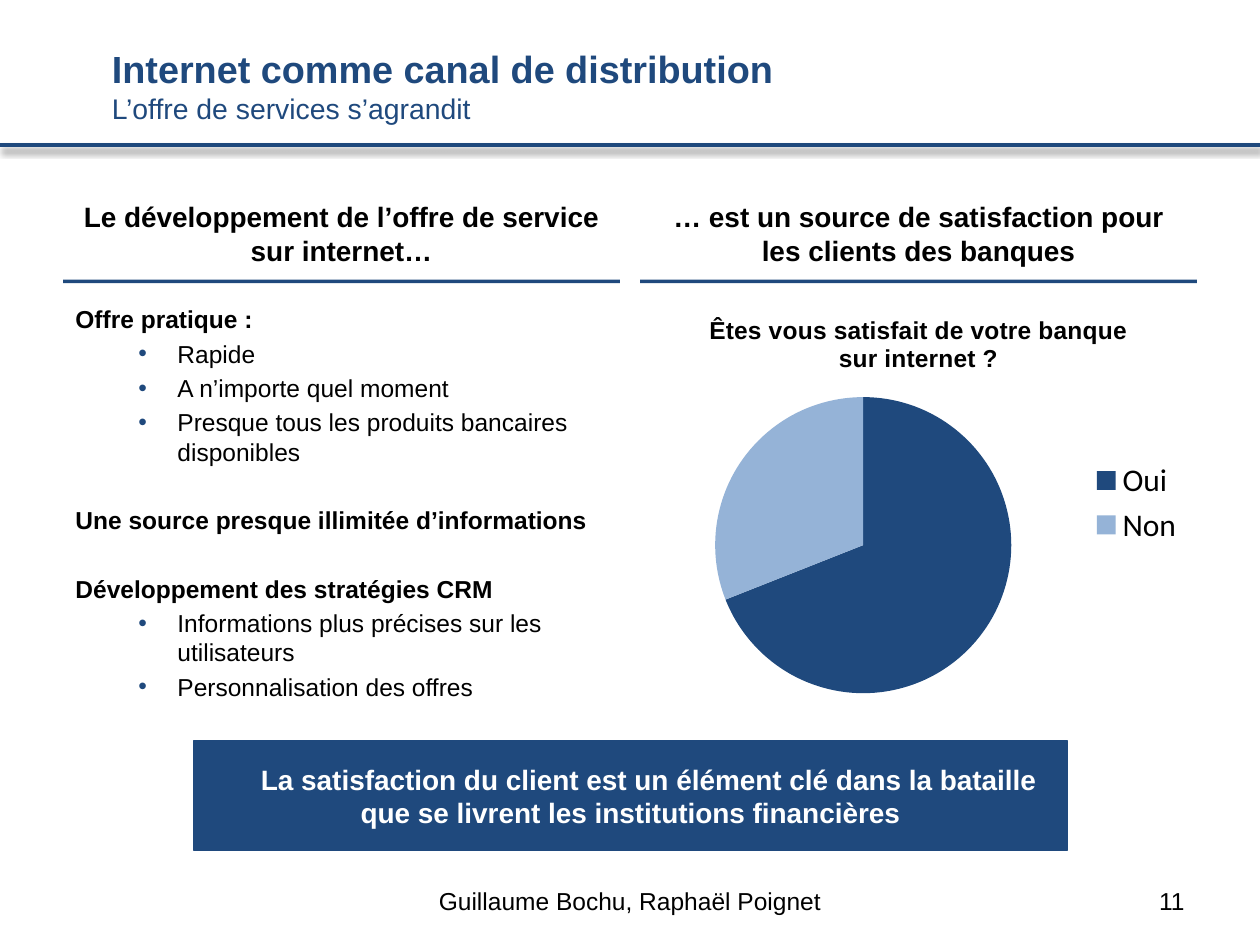
import pptx
import pptx.chart.data
import pptx.dml.color
import pptx.enum.chart
import pptx.enum.shapes
import pptx.enum.text
import pptx.oxml
import pptx.oxml.ns
import pptx.util
from lxml import etree

Inches = pptx.util.Inches
Pt = pptx.util.Pt
ALIGN = pptx.enum.text.PP_ALIGN
ANCHOR = pptx.enum.text.MSO_ANCHOR

NAVY, LIGHT_BLUE, BLACK, WHITE = "1F497D", "95B3D7", "000000", "FFFFFF"
LEFT_COLUMN, RIGHT_COLUMN, COLUMN_WIDTH = 0.5, 5.08, 4.42
HEADING, BULLET = 0, 1
BODY_SPACE, SECTION_SPACE = 2.8, 22.3

OFFERS = [
    ("Offre pratique :", HEADING),
    ("Rapide", BULLET),
    ("A n’importe quel moment", BULLET),
    ("Presque tous les produits bancaires disponibles", BULLET),
    ("Une source presque illimitée d’informations", HEADING),
    ("Développement des stratégies CRM", HEADING),
    ("Informations plus précises sur les utilisateurs", BULLET),
    ("Personnalisation des offres", BULLET),
]


def rgb(color):
    return pptx.dml.color.RGBColor.from_string(color)


def style_font(font, size, color=BLACK, bold=False, name="Arial"):
    font.name = name
    font.size = Pt(size)
    font.bold = bold
    font.color.rgb = rgb(color)


def set_indent(paragraph, margin, first_line):
    properties = paragraph._p.get_or_add_pPr()
    properties.set("marL", str(Inches(margin)))
    properties.set("indent", str(Inches(first_line)))


def set_bullet(paragraph, color):
    properties = paragraph._p.get_or_add_pPr()
    bullet_color = etree.SubElement(properties, pptx.oxml.ns.qn("a:buClr"))
    etree.SubElement(bullet_color, pptx.oxml.ns.qn("a:srgbClr"), val=color)
    etree.SubElement(properties, pptx.oxml.ns.qn("a:buFont"), typeface="Arial")
    etree.SubElement(properties, pptx.oxml.ns.qn("a:buChar"), char="•")


def add_shadow(shape, color, opacity, blur, distance):
    """Cast a shadow straight down; blur and distance are in points."""
    properties = shape._element.spPr
    for effects in properties.findall(pptx.oxml.ns.qn("a:effectLst")):
        properties.remove(effects)
    properties.append(pptx.oxml.parse_xml(
        f'<a:effectLst {pptx.oxml.ns.nsdecls("a")}>'
        f'<a:outerShdw blurRad="{Pt(blur)}" dist="{Pt(distance)}" dir="5400000" '
        f'algn="t" rotWithShape="0"><a:srgbClr val="{color}">'
        f'<a:alpha val="{opacity * 1000}"/></a:srgbClr></a:outerShdw></a:effectLst>'))


def add_text(slide, box, text, size, align=ALIGN.LEFT, color=BLACK):
    shape = slide.shapes.add_textbox(*map(Inches, box))
    frame = shape.text_frame
    frame.word_wrap = True
    frame.vertical_anchor = ANCHOR.MIDDLE
    frame.text = text
    paragraph = frame.paragraphs[0]
    paragraph.alignment = align
    for run in paragraph.runs:
        style_font(run.font, size, color)
    return shape


def add_box(slide, box, text, fill, color, anchor):
    shape = slide.shapes.add_shape(
        pptx.enum.shapes.MSO_SHAPE.RECTANGLE, *map(Inches, box))
    shape.shadow.inherit = False
    shape.fill.solid()
    shape.fill.fore_color.rgb = rgb(fill)
    shape.line.fill.background()
    frame = shape.text_frame
    frame.word_wrap = True
    frame.vertical_anchor = anchor
    frame.text = text
    paragraph = frame.paragraphs[0]
    paragraph.alignment = ALIGN.CENTER
    style_font(paragraph.runs[0].font, 16, color, bold=True)
    return shape


def add_title(slide):
    rule = slide.shapes.add_connector(
        pptx.enum.shapes.MSO_CONNECTOR.STRAIGHT,
        Inches(0), Inches(1.15), Inches(10), Inches(1.15))
    rule.line.color.rgb = rgb(NAVY)
    rule.line.width = Pt(2)
    add_shadow(rule, BLACK, 40, 4, 3)

    title = add_text(
        slide, (0.5, 0.29, 9, 0.77),
        "Internet comme canal de distribution\vL’offre de services s’agrandit",
        16.2, color=NAVY)
    paragraph = title.text_frame.paragraphs[0]
    set_indent(paragraph, 0.29, 0)
    style_font(paragraph.runs[0].font, 21.6, NAVY, bold=True)


def add_column_header(slide, left, text):
    header = add_box(slide, (left, 1.48, COLUMN_WIDTH, 0.74), text,
                     WHITE, BLACK, ANCHOR.BOTTOM)
    frame = header.text_frame
    frame.margin_left = frame.margin_right = Inches(0.1)
    frame.margin_top = frame.margin_bottom = Inches(0.1)
    add_shadow(header, NAVY, 100, 0, 2)


def add_offers(slide):
    shape = slide.shapes.add_textbox(
        *map(Inches, (LEFT_COLUMN, 2.34, COLUMN_WIDTH, 3.3)))
    frame = shape.text_frame
    frame.word_wrap = True
    frame.vertical_anchor = ANCHOR.MIDDLE
    for index, (text, level) in enumerate(OFFERS):
        paragraph = frame.add_paragraph() if index else frame.paragraphs[0]
        paragraph.text = text
        paragraph.level = level
        starts_section = index and level == HEADING
        paragraph.space_before = Pt(SECTION_SPACE if starts_section else BODY_SPACE)
        style_font(paragraph.runs[0].font, 14, bold=level == HEADING)
        if level == BULLET:
            set_indent(paragraph, 0.81, -0.31)
            set_bullet(paragraph, NAVY)


def add_satisfaction_chart(slide):
    data = pptx.chart.data.CategoryChartData()
    data.categories = ["Oui", "Non"]
    data.add_series("Series 1", (69, 31))
    chart = slide.shapes.add_chart(
        pptx.enum.chart.XL_CHART_TYPE.PIE,
        *map(Inches, (RIGHT_COLUMN, 2.34, COLUMN_WIDTH, 3.3)), data).chart
    style_font(chart.font, 18, name="Calibri")

    chart.has_title = True
    title_frame = chart.chart_title.text_frame
    title_frame.text = "Êtes vous satisfait de votre banque sur internet ?"
    style_font(title_frame.paragraphs[0].runs[0].font, 14, bold=True)
    chart.chart_title.include_in_layout = False

    chart.has_legend = True
    chart.legend.position = pptx.enum.chart.XL_LEGEND_POSITION.RIGHT
    chart.legend.include_in_layout = False

    plot = chart.plots[0]
    plot.vary_by_categories = True
    for index, color in enumerate((NAVY, LIGHT_BLUE)):
        fill = plot.series[0].points[index].format.fill
        fill.solid()
        fill.fore_color.rgb = rgb(color)


def add_conclusion(slide):
    banner = add_box(
        slide, (1.54, 5.88, 6.93, 0.87),
        "La satisfaction du client est un élément clé dans la bataille "
        "que se livrent les institutions financières",
        NAVY, WHITE, ANCHOR.MIDDLE)
    banner.line.color.rgb = rgb(NAVY)
    banner.line.width = Pt(0.75)
    set_indent(banner.text_frame.paragraphs[0], 0, 0.29)


def main():
    presentation = pptx.Presentation()
    presentation.slide_width = Inches(10)
    presentation.slide_height = Inches(7.5)
    slide = presentation.slides.add_slide(presentation.slide_layouts[6])
    add_title(slide)
    add_column_header(slide, LEFT_COLUMN,
                      "Le développement de l’offre de service sur internet…")
    add_offers(slide)
    add_column_header(slide, RIGHT_COLUMN,
                      "… est un source de satisfaction pour les clients des banques")
    add_satisfaction_chart(slide)
    add_text(slide, (3.34, 6.95, 3.32, 0.4), "Guillaume Bochu, Raphaël Poignet",
             14, ALIGN.CENTER)
    add_text(slide, (7.17, 6.95, 2.33, 0.4), "11", 14, ALIGN.RIGHT)
    add_conclusion(slide)
    presentation.save("out.pptx")


if __name__ == "__main__":
    main()
